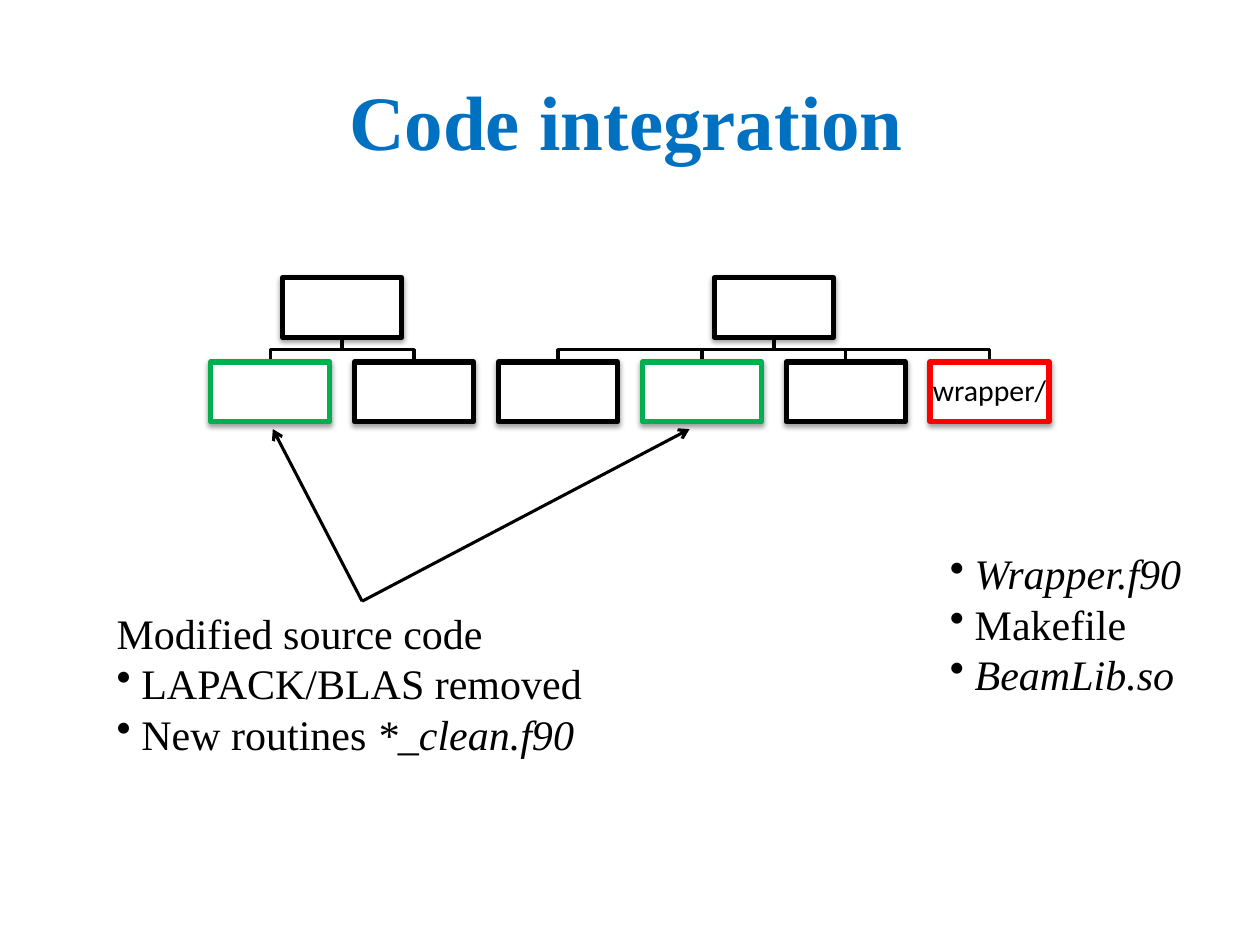
"""Build the slide showing how the modified code fits into the source trees."""
from lxml.etree import SubElement
from pptx import Presentation
from pptx.dml.color import RGBColor
from pptx.enum.shapes import MSO_CONNECTOR as MC, MSO_SHAPE as MS
from pptx.enum.text import MSO_ANCHOR as MA, PP_ALIGN as PA
from pptx.oxml.ns import qn
from pptx.util import Cm, Pt


def rgb(value):
    return RGBColor.from_string(value)


def add_run(p, text, color, **fmt):
    r = p.add_run()
    r.text = text
    r.font.color.rgb = rgb(color)
    for name, value in fmt.items():
        setattr(r.font, name, value)


BLACK, GREEN, RED = "000000", "00B050", "FF0000"
SERIF = {"name": "Times New Roman", "size": Pt(24)}
LEFT, PITCH, WIDTH, HEIGHT = 4.25, 2.9, 2.4, 1.2
ROOT_TOP, LEAF_TOP = 5.6, 7.3
MID_Y = (ROOT_TOP + HEIGHT + LEAF_TOP) / 2

prs = Presentation()
prs.slide_width, prs.slide_height = Cm(25.4), Cm(19.05)
s = prs.slides.add_slide(prs.slide_layouts[6])

trees = [(0, [GREEN, BLACK]), (2, [BLACK, GREEN, BLACK, RED])]
boxes = []
for first, colors in trees:
    root_x = LEFT + PITCH * (first + (len(colors) - 1) / 2)
    boxes.append((root_x, ROOT_TOP, BLACK))
    for i, color in enumerate(colors, first):
        leaf_x = LEFT + PITCH * i
        boxes.append((leaf_x, LEAF_TOP, color))
        start, end = Cm(root_x + WIDTH / 2), Cm(leaf_x + WIDTH / 2)
        fb = s.shapes.build_freeform(start, Cm(ROOT_TOP + HEIGHT))
        fb.add_line_segments(
            [(start, Cm(MID_Y)), (end, Cm(MID_Y)), (end, Cm(LEAF_TOP))], close=False)
        sp = fb.convert_to_shape()
        sp.fill.background()
        sp.line.color.rgb = rgb(BLACK)
        sp.line.width = Pt(2)
        sp.shadow.inherit = False

for x, y, color in boxes:
    sp = s.shapes.add_shape(MS.RECTANGLE, Cm(x), Cm(y), Cm(WIDTH), Cm(HEIGHT))
    sp.fill.solid()
    sp.fill.fore_color.rgb = rgb("FFFFFF")
    sp.line.color.rgb = rgb(color)
    sp.line.width = Pt(3)
    sp.shadow.inherit = False
    effects = sp.element.spPr.find(qn("a:effectLst"))
    shadow = SubElement(effects, qn("a:outerShdw"), blurRad=str(Pt(3.1)),
                        dist=str(Pt(1.6)), dir="5400000", rotWithShape="0")
    tint = SubElement(shadow, qn("a:srgbClr"), val=BLACK)
    SubElement(tint, qn("a:alpha"), val="38000")
    if color == RED:
        tf = sp.text_frame
        frame = {"margin_left": 0, "margin_right": 0, "margin_top": 0, "margin_bottom": 0,
                 "word_wrap": False, "vertical_anchor": MA.MIDDLE}
        for name, value in frame.items():
            setattr(tf, name, value)
        p = tf.paragraphs[0]
        p.alignment = PA.CENTER
        p.line_spacing = 0.9
        add_run(p, "wrapper/", BLACK, name="Calibri", size=Pt(17))

title = s.shapes.add_textbox(Cm(0.65), Cm(1.35), Cm(23.95), Cm(2.05))
title.text_frame.word_wrap = True
p = title.text_frame.paragraphs[0]
p.alignment = PA.CENTER
add_run(p, "Code integration", "0070C0", name="Times New Roman", size=Pt(44), bold=True)

notes = [
    ((18.9, 10.92, 6, 3.33), [
        (True, [("Wrapper.f90", True)]),
        (True, [("Makefile", False)]),
        (True, [("BeamLib.so", True)]),
    ]),
    ((2.1, 12.12, 10.4, 4.37), [
        (False, [("Modified source code", False)]),
        (True, [("LAPACK/BLAS removed", False)]),
        (True, [("New routines ", False), ("*_clean.f90", True)]),
    ]),
]
for place, lines in notes:
    note = s.shapes.add_textbox(*map(Cm, place))
    tf = note.text_frame
    tf.word_wrap = True
    for i, (bullet, runs) in enumerate(lines):
        p = tf.add_paragraph() if i else tf.paragraphs[0]
        if bullet:
            pPr = p._p.get_or_add_pPr()
            pPr.set("marL", str(Cm(0.5)))
            pPr.set("indent", str(Cm(-0.5)))
            SubElement(pPr, qn("a:buChar"), char="•")
        for text, italic in runs:
            add_run(p, text, BLACK, italic=italic, **SERIF)

for x in (5.5, 13.9):
    sp = s.shapes.add_connector(MC.STRAIGHT, Cm(7.3), Cm(12.12), Cm(x), Cm(8.65))
    sp.begin_connect(note, 0)
    sp.line.color.rgb = rgb(BLACK)
    sp.line.width = Pt(1.75)
    spPr = sp.element.spPr
    SubElement(spPr.find(qn("a:ln")), qn("a:tailEnd"), type="arrow")
    SubElement(spPr, qn("a:effectLst"))

prs.save("out.pptx")
